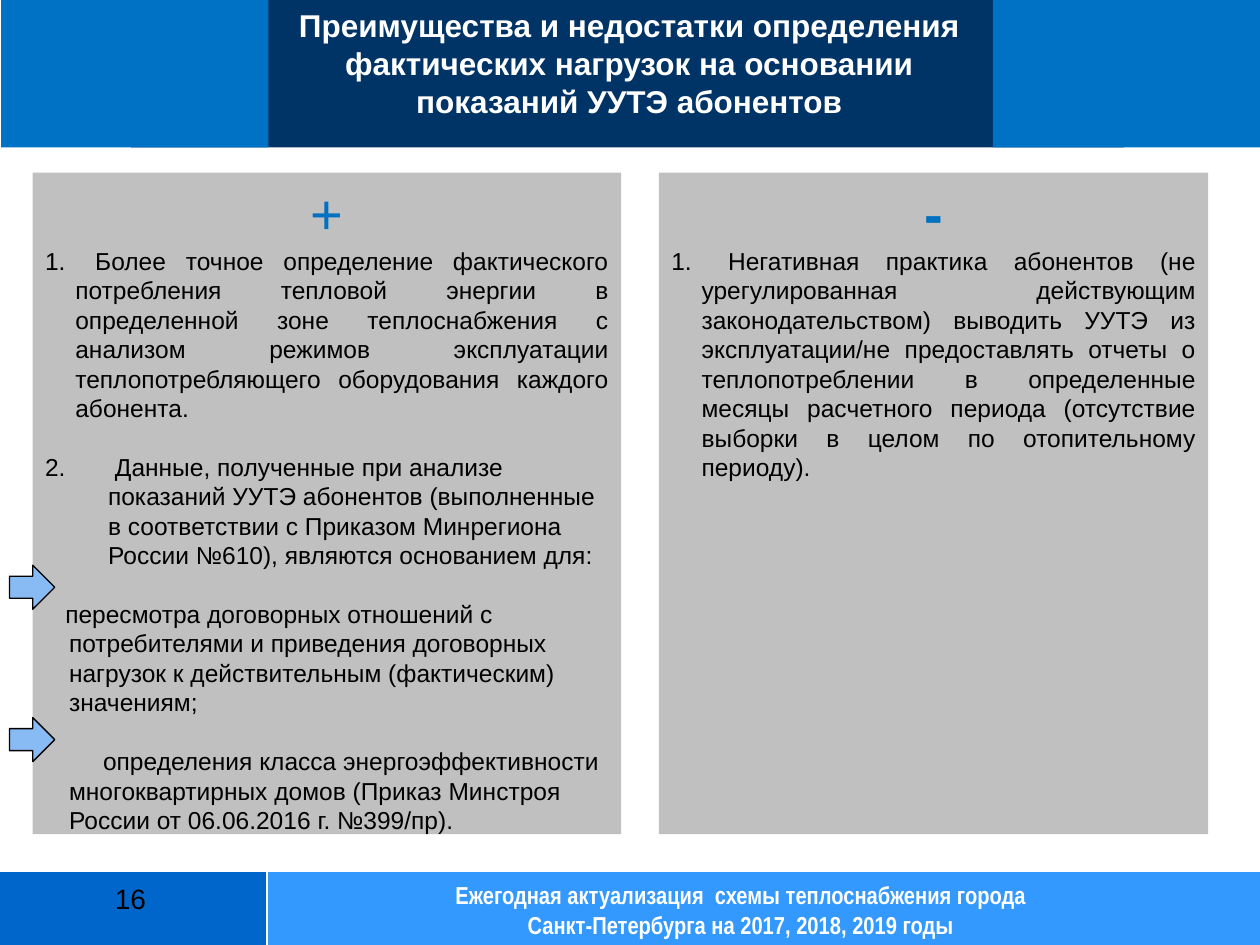
from pptx import Presentation
from pptx.dml.color import RGBColor
from pptx.enum.shapes import MSO_CONNECTOR as Link, MSO_SHAPE as Kind
from pptx.enum.text import MSO_ANCHOR as Anchor, PP_ALIGN as Align
from pptx.oxml.ns import qn
from pptx.util import Inches, Pt
from lxml.etree import SubElement

HUES = {
    "white": "FFFFFF", "black": "000000", "navy": "003366", "blue": "0072C5",
    "page": "0066CC", "foot": "3399FF", "panel": "C0C0C0", "sign": "0070C0",
    "arrow": "88BBF4",
}
TITLE = ("Преимущества и недостатки определения фактических нагрузок "
         "на основании показаний УУТЭ абонентов")
FOOT = ["Ежегодная актуализация  схемы теплоснабжения города",
        "Санкт-Петербурга на 2017, 2018, 2019 годы"]
LEAD = 16.8
ITEM = dict(align=Align.JUSTIFY, left=0.24, first=-0.24, num=1)
PROS = [
    (" Более точное определение фактического потребления тепловой энергии в "
     "определенной зоне теплоснабжения с анализом режимов эксплуатации "
     "теплопотребляющего оборудования каждого абонента.", ITEM),
    (" Данные, полученные при анализе показаний УУТЭ абонентов (выполненные в "
     "соответствии с Приказом Минрегиона России №610), являются основанием для:",
     dict(left=0.5, first=-0.5, num=2, before=LEAD)),
    ("пересмотра договорных отношений с потребителями и приведения договорных "
     "нагрузок к действительным (фактическим) значениям;",
     dict(left=0.19, first=-0.03, before=LEAD)),
    ("определения класса энергоэффективности многоквартирных домов (Приказ "
     "Минстроя России от 06.06.2016 г. №399/пр).",
     dict(left=0.19, first=0.27, before=LEAD)),
]
CONS = [
    (" Негативная практика абонентов (не урегулированная действующим "
     "законодательством) выводить УУТЭ из эксплуатации/не предоставлять отчеты "
     "о теплопотреблении в определенные месяцы расчетного периода (отсутствие "
     "выборки в целом по отопительному периоду).", ITEM),
]


def tint(name):
    return RGBColor.from_string(HUES[name])


def block(slide, box, fill, kind=Kind.RECTANGLE, edge=None, turn=0):
    shape = slide.shapes.add_shape(kind, *map(Inches, box))
    shape.shadow.inherit = False
    shape.rotation = turn
    shape.fill.solid()
    shape.fill.fore_color.rgb = tint(fill)
    if edge:
        shape.line.color.rgb = tint(edge)
        shape.line.width = Pt(0.75)
    else:
        shape.line.fill.background()
    return shape


def rule(slide, *ends):
    line = slide.shapes.add_connector(Link.STRAIGHT, *map(Inches, ends))
    line.line.color.rgb = tint("white")
    line.line.width = Pt(1.25)
    SubElement(line._element.spPr, qn("a:effectLst"))


def label(slide, box):
    shape = slide.shapes.add_textbox(*map(Inches, box))
    return open_frame(shape)


def open_frame(shape):
    frame = shape.text_frame
    frame.word_wrap = True
    frame.vertical_anchor = Anchor.TOP
    return frame


def write(frame, text, size=14, lead=LEAD, hue="black", bold=False, face="Arial",
          align=Align.LEFT, left=0, first=0, num=None, before=0):
    para = frame.paragraphs[0]
    if para.runs:
        para = frame.add_paragraph()
    props = para._p.get_or_add_pPr()
    props.set("marL", str(Inches(left)))
    props.set("indent", str(Inches(first)))
    if num:
        SubElement(props, qn("a:buFont"), typeface="+mj-lt")
        SubElement(props, qn("a:buAutoNum"), type="arabicPeriod", startAt=str(num))
    para.alignment = align
    para.line_spacing = Pt(lead)
    para.space_before = Pt(before)
    run = para.add_run()
    run.text = text
    run.font.name = face
    run.font.size = Pt(size)
    run.font.bold = bold
    run.font.color.rgb = tint(hue)


def panel(slide, box, sign, items, bold=False):
    frame = open_frame(block(slide, box, "panel"))
    write(frame, sign, size=32, lead=38.4, hue="sign", bold=bold, align=Align.CENTER)
    for text, form in items:
        write(frame, text, **form)


def bands(slide):
    block(slide, (0, 6.91, 2.12, 0.59), "page")
    block(slide, (2.12, 6.91, 7.88, 0.59), "foot")
    rule(slide, 2.12, 6.91, 2.12, 7.5)
    rule(slide, 0, 6.91, 10, 6.91)
    block(slide, (1.04, 0, 7.88, 1.17), "navy")
    rule(slide, 0, 1.18, 10, 1.18)
    for left in (0.01, 7.88):
        block(slide, (left, 0, 2.12, 1.17), "blue")


def main():
    """Build the slide and save it."""
    deck = Presentation()
    deck.slide_width, deck.slide_height = Inches(10), Inches(7.5)
    slide = deck.slides.add_slide(deck.slide_layouts[6])
    bands(slide)
    write(label(slide, (2.11, 0, 5.77, 1.1)), TITLE, size=18, lead=21.7,
          hue="white", bold=True, align=Align.CENTER)
    write(label(slide, (0.22, 6.96, 1.63, 0.52)), "16", size=16, lead=18.4,
          align=Align.CENTER)
    foot = label(slide, (3.38, 6.93, 5, 0.57))
    for text in FOOT:
        write(foot, text, lead=17.1, hue="white", bold=True, face="Arial Narrow",
              align=Align.CENTER)
    panel(slide, (0.26, 1.37, 4.67, 5.25), "+", PROS)
    panel(slide, (5.23, 1.37, 4.36, 5.25), "-", CONS, bold=True)
    for top in (4.48, 5.69):
        block(slide, (0.08, top, 0.35, 0.36), "arrow", Kind.DOWN_ARROW, "black", 270)
    deck.save("out.pptx")


if __name__ == "__main__":
    main()
